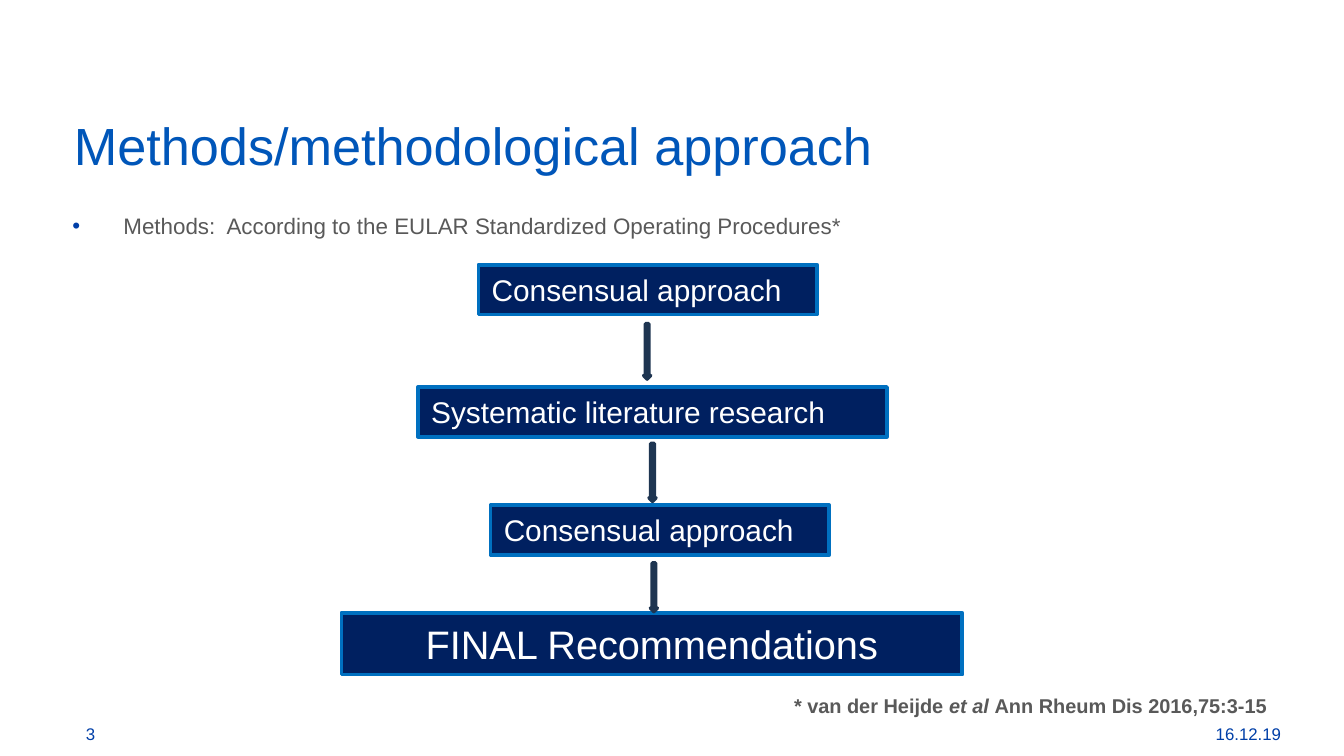
from lxml import etree
from pptx import Presentation
from pptx.dml.color import RGBColor
from pptx.enum.shapes import MSO_SHAPE
from pptx.enum.text import MSO_ANCHOR, PP_ALIGN
from pptx.oxml.ns import qn
from pptx.util import Inches, Pt

RECT, ARROW = MSO_SHAPE.RECTANGLE, MSO_SHAPE.DOWN_ARROW
TOP, MIDDLE = MSO_ANCHOR.TOP, MSO_ANCHOR.MIDDLE
LEFT, CENTER, RIGHT = PP_ALIGN.LEFT, PP_ALIGN.CENTER, PP_ALIGN.RIGHT

FONT = "Arial"
COLORS = {
    "title": "0056B9", "accent": "003FA8", "body": "595959", "white": "FFFFFF",
    "box": "002060", "edge": "0070C0", "arrow": "28476D", "rim": "1E3551",
}
TITLE = "Methods/methodological approach"
METHOD = "Methods:  According to the EULAR Standardized Operating Procedures*"
SOURCE = [("* van der Heijde ", False), ("et al ", True),
          ("Ann Rheum Dis 2016,75:3-15", False)]
STEPS = [
    ("Consensual approach", (3.56, 1.97, 2.52, 0.37), 16, LEFT),
    ("Systematic literature research", (3.11, 2.88, 3.49, 0.37), 16, LEFT),
    ("Consensual approach", (3.65, 3.76, 2.52, 0.37), 16, LEFT),
    ("FINAL Recommendations", (2.54, 4.56, 4.62, 0.46), 21.3, CENTER),
]
ARROWS = [(4.79, 2.41, 0.05, 0.41), (4.83, 3.3, 0.05, 0.43),
          (4.84, 4.19, 0.05, 0.36)]
FOOTER = [("16.12.19", (8.29, 5.31, 1.34, 0.3), RIGHT),
          ("3", (0.54, 5.31, 0.96, 0.3), LEFT)]


def rgb(name):
    return RGBColor.from_string(COLORS[name])


def style(font, size, color):
    font.name, font.size = FONT, Pt(size)
    font.color.rgb = rgb(color)


def write(shape, text, size, color, align=LEFT, anchor=TOP):
    frame = shape.text_frame
    frame.word_wrap = True
    frame.vertical_anchor = anchor
    frame.text = text
    para = frame.paragraphs[0]
    para.alignment = align
    for run in para.runs:
        style(run.font, size, color)
    return frame


def add_text(slide, area, *args):
    return write(slide.shapes.add_textbox(*map(Inches, area)), *args)


def add_block(slide, kind, area, fill, edge):
    shape = slide.shapes.add_shape(kind, *map(Inches, area))
    shape.shadow.inherit = False
    shape.fill.solid()
    shape.fill.fore_color.rgb = rgb(fill)
    shape.line.color.rgb = rgb(edge)
    shape.line.width = Pt(2)
    return shape


def add_bullet(para, color):
    props = para._p.get_or_add_pPr()
    props.set("marL", str(Inches(0.38)))
    props.set("indent", str(Inches(-0.38)))
    tint = etree.SubElement(props, qn("a:buClr"))
    etree.SubElement(tint, qn("a:srgbClr"), val=COLORS[color])
    etree.SubElement(props, qn("a:buFont"), typeface=FONT)
    etree.SubElement(props, qn("a:buChar"), char="•")


def main():
    deck = Presentation()
    deck.slide_width = Inches(10)
    deck.slide_height = deck.slide_width * 9 // 16
    slide = deck.slides.add_slide(deck.slide_layouts[6])

    frame = add_text(slide, (0.51, 0.79, 9.11, 0.52), TITLE, 28, "title")
    frame.margin_left = Inches(0.04)

    frame = add_text(slide, (0.44, 1.53, 9.11, 3.38), METHOD, 12, "body")
    add_bullet(frame.paragraphs[0], "accent")

    for text, area, align in FOOTER:
        add_text(slide, area, text, 9, "accent", align, MIDDLE)

    frame = add_text(slide, (5.81, 5.11, 3.74, 0.28), "", 10.7, "body")
    frame.word_wrap = False
    for text, italic in SOURCE:
        run = frame.paragraphs[0].add_run()
        run.text = text
        style(run.font, 10.7, "body")
        run.font.bold, run.font.italic = True, italic

    for text, area, size, align in STEPS:
        box = add_block(slide, RECT, area, "box", "edge")
        write(box, text, size, "white", align)
    for area in ARROWS:
        add_block(slide, ARROW, area, "arrow", "rim")

    deck.save("out.pptx")


if __name__ == "__main__":
    main()
